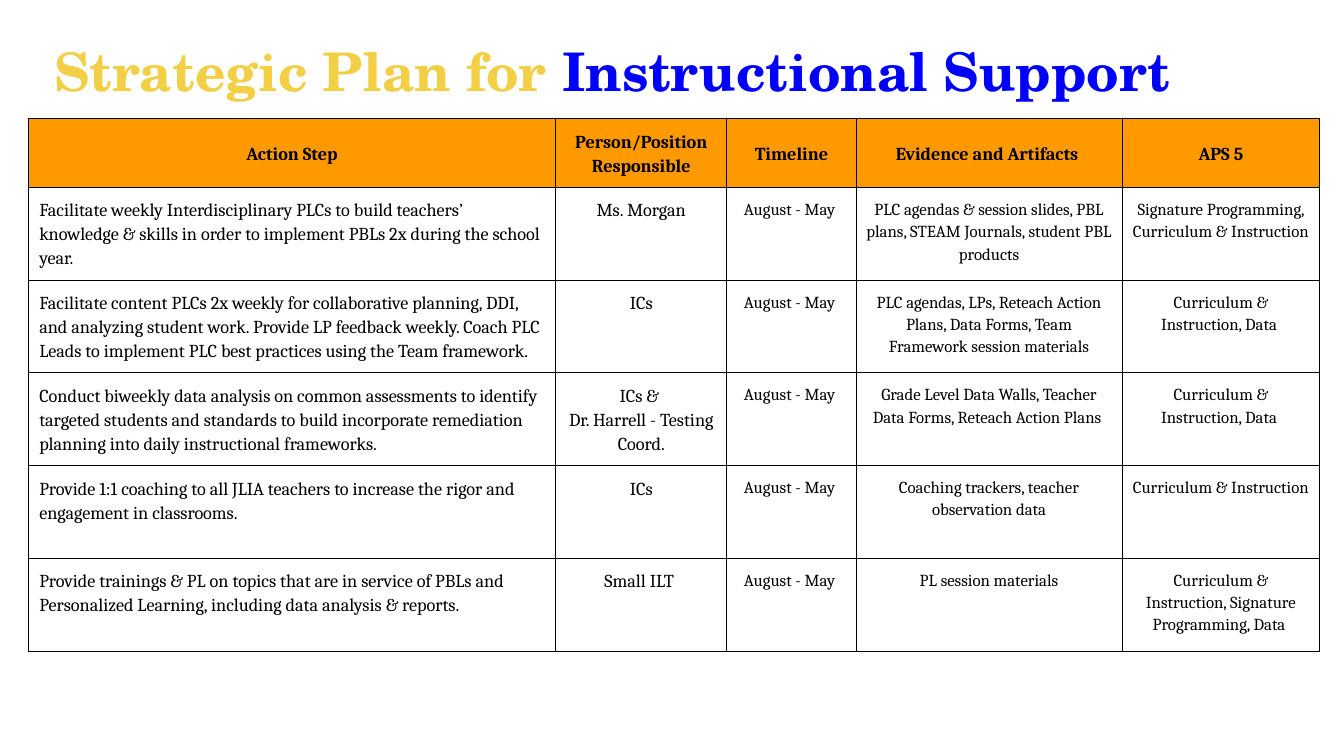
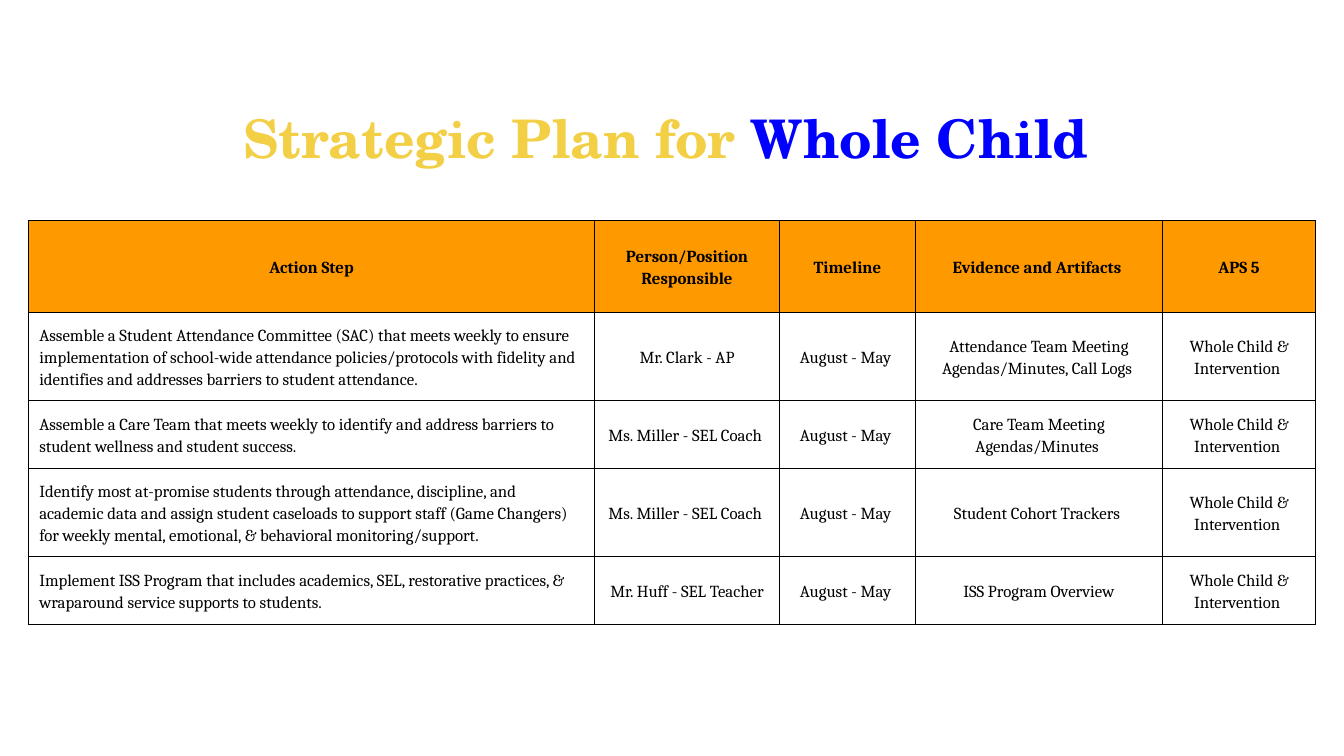
from lxml.etree import SubElement as Sub
from pptx import Presentation
from pptx.dml.color import RGBColor
from pptx.enum.text import MSO_ANCHOR as Anchor, PP_ALIGN as Align
from pptx.oxml.ns import qn
from pptx.util import Inches, Pt

# Shared look
GOLD = RGBColor(0xF3, 0xCF, 0x45)
BLUE = RGBColor(0x00, 0x00, 0xFF)
BLACK = RGBColor(0x00, 0x00, 0x00)
ORANGE = RGBColor(0xFF, 0x99, 0x00)
SERIF, BODY = "TeX Gyre Schola", "Cambria"
LEFT = 0.28
HEADS = ["Action Step", "Person/Position Responsible", "Timeline",
         "Evidence and Artifacts ", "APS 5"]
MONTHS = "August - May "

# Rows: step, person, evidence, APS 5 area
SUPPORT = [
    ("Facilitate weekly Interdisciplinary PLCs to build teachers’ knowledge & "
     "skills in order to implement PBLs 2x during the school year.",
     "Ms. Morgan",
     "PLC agendas & session slides, PBL plans, STEAM Journals, student PBL products",
     "Signature Programming, Curriculum & Instruction "),
    ("Facilitate content PLCs 2x weekly for collaborative planning, DDI, and "
     "analyzing student work. Provide LP feedback weekly. Coach PLC Leads to "
     "implement PLC best practices using the Team framework.",
     "ICs",
     "PLC agendas, LPs, Reteach Action Plans, Data Forms, Team Framework "
     "session materials",
     "Curriculum & Instruction, Data "),
    ("Conduct biweekly data analysis on common assessments to identify targeted "
     "students and standards to build incorporate remediation planning into "
     "daily instructional frameworks.",
     "ICs & \nDr. Harrell - Testing Coord.",
     "Grade Level Data Walls, Teacher Data Forms, Reteach Action Plans ",
     "Curriculum & Instruction, Data "),
    ("Provide 1:1 coaching to all JLIA teachers to increase the rigor and "
     "engagement in classrooms.",
     "ICs",
     "Coaching trackers, teacher observation data",
     "Curriculum & Instruction "),
    ("Provide trainings & PL on topics that are in service of PBLs and "
     "Personalized Learning, including data analysis & reports.",
     "Small ILT ",
     "PL session materials",
     "Curriculum & Instruction, Signature Programming, Data "),
]
WHOLE = "Whole Child & Intervention "
CHILD = [
    ("Assemble a Student Attendance Committee (SAC) that meets weekly to ensure "
     "implementation of school-wide attendance policies/protocols with fidelity "
     "and identifies and addresses barriers to student attendance.",
     "Mr. Clark - AP",
     "Attendance Team Meeting Agendas/Minutes, Call Logs ", WHOLE),
    ("Assemble a Care Team that meets weekly to identify and address barriers "
     "to student wellness and student success.",
     "Ms. Miller - SEL Coach ",
     "Care Team Meeting Agendas/Minutes ", WHOLE),
    ("Identify most at-promise students through attendance, discipline, and "
     "academic data and assign student caseloads to support staff (Game "
     "Changers) for weekly mental, emotional, & behavioral monitoring/support.",
     "Ms. Miller - SEL Coach ",
     "Student Cohort Trackers ", WHOLE),
    ("Implement ISS Program that includes academics, SEL, restorative "
     "practices, & wraparound service supports to students.",
     "Mr. Huff - SEL Teacher",
     "ISS Program Overview", WHOLE),
]


def add_title(slide, top, topic, align):
    """Two-colour title, resting on the bottom of its box."""
    box = slide.shapes.add_textbox(Inches(0.44), Inches(top),
                                   Inches(12.48), Inches(0.82))
    frame = box.text_frame
    frame.word_wrap = True
    frame.vertical_anchor = Anchor.BOTTOM
    para = frame.paragraphs[0]
    para.alignment, para.line_spacing = align, 0.85
    font = para.font
    font.name, font.size, font.bold = SERIF, Pt(38), True
    for text, color in (("Strategic Plan for ", GOLD), (topic, BLUE)):
        run = para.add_run()
        run.text = text
        run.font.color.rgb = color


def add_edges(cell):
    """Thin black line on all four sides; lines must precede the fill."""
    props = cell._tc.get_or_add_tcPr()
    for spot, side in enumerate(("lnL", "lnR", "lnT", "lnB")):
        line = Sub(props, qn("a:" + side), w=str(Pt(0.75)))
        Sub(Sub(line, qn("a:solidFill")), qn("a:srgbClr"), val=str(BLACK))
        props.insert(spot, line)


def set_pads(cell, align, anchor):
    """Inner margins, by the way the text is placed."""
    left, right = (0.11, 0.12) if align == Align.LEFT else (0.1, 0.1)
    top, base = (0.1, 0.07) if anchor == Anchor.TOP else (0.08, 0.08)
    cell.margin_left, cell.margin_right = Inches(left), Inches(right)
    cell.margin_top, cell.margin_bottom = Inches(top), Inches(base)


def fill_cell(cell, text, size, align, anchor, head):
    cell.text = text
    cell.vertical_anchor = anchor
    set_pads(cell, align, anchor)
    if head:
        cell.fill.solid()
        cell.fill.fore_color.rgb = ORANGE
    else:
        cell.fill.background()
    add_edges(cell)
    for para in cell.text_frame.paragraphs:
        para.alignment, para.line_spacing = align, 1.15
        font = para.font
        font.name, font.size, font.bold = BODY, Pt(size), head
        font.color.rgb = BLACK


def add_plan(slide, top, widths, heights, steps, big, anchor):
    """Plan table; big is the text size of the heads and first two columns."""
    rows = [HEADS] + [(step, who, MONTHS, proof, area)
                      for step, who, proof, area in steps]
    table = slide.shapes.add_table(
        len(rows), len(HEADS), Inches(LEFT), Inches(top),
        Inches(sum(widths)), Inches(sum(heights))).table
    table.first_row = table.horz_banding = False
    for col, width in zip(table.columns, widths):
        col.width = Inches(width)
    for r, (texts, height) in enumerate(zip(rows, heights)):
        table.rows[r].height = Inches(height)
        head = r == 0
        for c, text in enumerate(texts):
            size = big if head or c < 2 else 12
            align = Align.CENTER if head or c else Align.LEFT
            fill_cell(table.cell(r, c), text, size, align,
                      Anchor.MIDDLE if head else anchor, head)


def main():
    deck = Presentation()
    deck.slide_width, deck.slide_height = Inches(13.33), Inches(7.5)
    blank = deck.slide_layouts[6]

    # Instructional support
    slide = deck.slides.add_slide(blank)
    add_title(slide, 0.24, "Instructional Support", Align.LEFT)
    add_plan(slide, 1.18, [5.23, 1.7, 1.28, 2.64, 1.96],
             [0.68] + [0.92] * 5, SUPPORT, 13, Anchor.TOP)

    # Whole child
    slide = deck.slides.add_slide(blank)
    add_title(slide, 0.91, "Whole Child ", Align.CENTER)
    add_plan(slide, 2.19, [5.62, 1.83, 1.35, 2.45, 1.52],
             [0.91] + [0.87, 0.68] * 2, CHILD, 12, Anchor.MIDDLE)

    deck.save("out.pptx")


if __name__ == "__main__":
    main()
